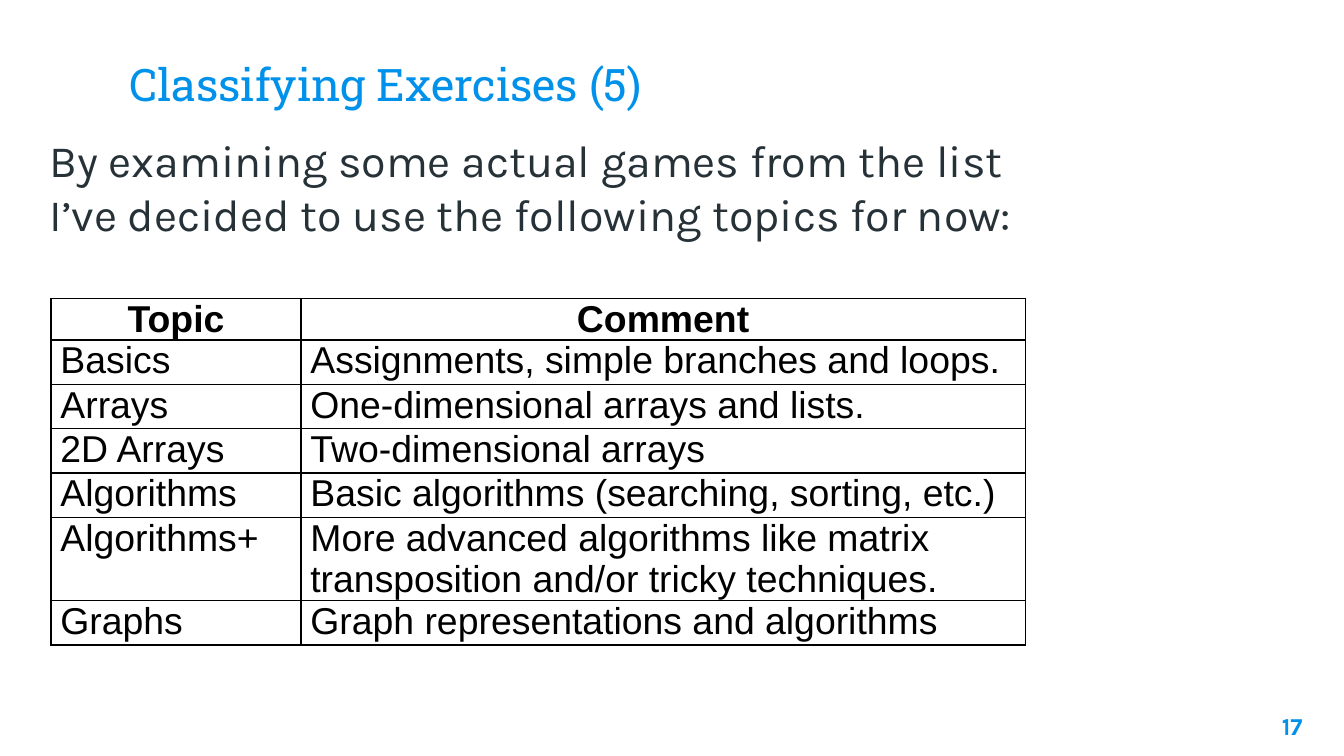
"""Build the slide that lists the exercise topics with a comment on each."""
from typing import NamedTuple

import lxml.etree
import pptx
import pptx.dml.color
import pptx.enum.text
import pptx.oxml.ns
import pptx.util

Inches = pptx.util.Inches
Pt = pptx.util.Pt
ALIGN = pptx.enum.text.PP_ALIGN
ANCHOR = pptx.enum.text.MSO_ANCHOR

COLORS = {"accent": "0091EA", "body": "263238", "table": "000000", "back": "FFFFFF"}


class Box(NamedTuple):
    left: float
    top: float
    width: float
    height: float


class Topic(NamedTuple):
    name: str
    comment: str
    height: float = 0.33


HEADER = Topic("Topic", "Comment", 0.31)
TOPICS = [
    Topic("Basics", "Assignments, simple branches and loops."),
    Topic("Arrays", "One-dimensional arrays and lists."),
    Topic("2D Arrays", "Two-dimensional arrays"),
    Topic("Algorithms", "Basic algorithms (searching, sorting, etc.)"),
    Topic(
        "Algorithms+",
        "More advanced algorithms like matrix transposition and/or tricky techniques.",
        0.62,
    ),
    Topic("Graphs", "Graph representations and algorithms"),
]
COLUMN_WIDTHS = (1.86, 5.39)


def place(sp, box: Box) -> None:
    """Move and size a shape."""
    sp.left, sp.top, sp.width, sp.height = map(Inches, box)


def write(tf, text: str, *, size: float, font: str, color: str, bold: bool = False,
          align=ALIGN.LEFT, anchor=ANCHOR.TOP, left_inset: float = 0.1) -> None:
    """Fill a text frame with one formatted paragraph, breaking at newlines."""
    tf.word_wrap = True
    tf.auto_size = pptx.enum.text.MSO_AUTO_SIZE.NONE
    tf.vertical_anchor = anchor
    tf.margin_left = Inches(left_inset)
    tf.margin_top = tf.margin_right = tf.margin_bottom = Inches(0.1)
    format_paragraph(tf.paragraphs[0], text, size, font, color, bold, align)


def format_paragraph(p, text: str, size: float, font: str, color: str,
                     bold: bool, align) -> None:
    """Add the lines of a text to a paragraph with one format."""
    p.alignment = align
    for i, line in enumerate(text.split("\n")):
        if i:
            p.add_line_break()
        r = p.add_run()
        r.text = line
        r.font.size = Pt(size)
        r.font.name = font
        r.font.bold = bold
        r.font.color.rgb = pptx.dml.color.RGBColor.from_string(COLORS[color])


def add_text(s, box: Box, text: str, **style) -> None:
    """Add a text box."""
    write(s.shapes.add_textbox(*map(Inches, box)).text_frame, text, **style)


def set_borders(cell, width: float = 0.75) -> None:
    """Draw a solid line on each side of a cell."""
    qn = pptx.oxml.ns.qn
    tc_pr = cell._tc.get_or_add_tcPr()
    for side in ("a:lnL", "a:lnR", "a:lnT", "a:lnB"):
        ln = lxml.etree.SubElement(tc_pr, qn(side), w=str(Pt(width)))
        fill = lxml.etree.SubElement(ln, qn("a:solidFill"))
        lxml.etree.SubElement(fill, qn("a:srgbClr"), val=COLORS["table"])


def fill_cell(cell, text: str, bold: bool, align) -> None:
    """Write, border and clear the fill of a table cell."""
    cell.margin_left = cell.margin_right = Inches(0.07)
    cell.margin_top = cell.margin_bottom = 0
    format_paragraph(cell.text_frame.paragraphs[0], text, 20, "Arial", "table", bold, align)
    set_borders(cell)
    cell.fill.background()


def add_topic_table(s, left: float, top: float) -> None:
    """Add the table of topics under its header row."""
    rows = [HEADER, *TOPICS]
    width, height = sum(COLUMN_WIDTHS), sum(row.height for row in rows)
    table = s.shapes.add_table(
        len(rows), len(COLUMN_WIDTHS), *map(Inches, (left, top, width, height))
    ).table
    table.first_row = table.horz_banding = False
    for column, column_width in zip(table.columns, COLUMN_WIDTHS):
        column.width = Inches(column_width)
    for i, row in enumerate(rows):
        table.rows[i].height = Inches(row.height)
        is_header = row is HEADER
        aligns = (ALIGN.CENTER, ALIGN.CENTER) if is_header else (ALIGN.JUSTIFY, ALIGN.LEFT)
        for j, (text, align) in enumerate(zip((row.name, row.comment), aligns)):
            fill_cell(table.cell(i, j), text, is_header, align)


def main() -> None:
    """Build and save the slide."""
    prs = pptx.Presentation()
    prs.slide_width = Inches(10)
    prs.slide_height = prs.slide_width * 9 // 16
    s = prs.slides.add_slide(prs.slide_layouts[5])
    s.background.fill.solid()
    s.background.fill.fore_color.rgb = pptx.dml.color.RGBColor.from_string(COLORS["back"])

    title = s.shapes.title
    place(title, Box(0.86, 0.15, 8.28, 0.77))
    write(title.text_frame, "Classifying Exercises (5)", size=24, font="Roboto Slab",
          color="accent", anchor=ANCHOR.BOTTOM)
    add_text(
        s, Box(0.19, 0.89, 9.6, 1.02),
        "By examining some actual games from the list\n"
        "I’ve decided to use the following topics for now:",
        size=24, font="Karla", color="body", left_inset=0.18,
    )
    add_topic_table(s, 0.38, 2.22)
    add_text(s, Box(9.19, 5.19, 0.6, 0.43), "17", size=13, font="Karla",
             color="accent", bold=True, align=ALIGN.RIGHT)
    prs.save("out.pptx")


if __name__ == "__main__":
    main()
